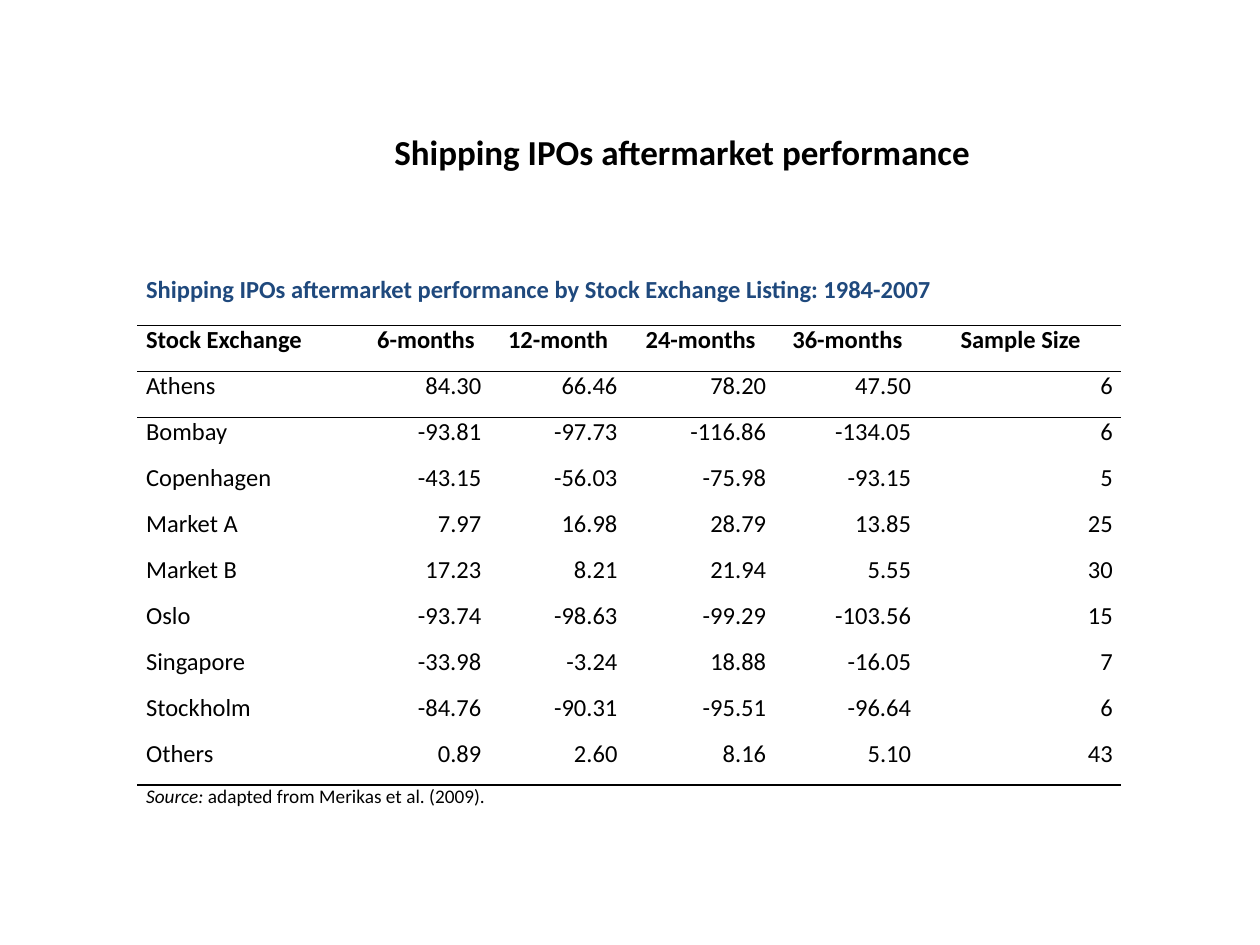
from lxml import etree
from pptx import Presentation
from pptx.dml.color import RGBColor
from pptx.enum.text import MSO_ANCHOR, PP_ALIGN
from pptx.oxml.ns import qn
from pptx.util import Pt

LEFT, CENTER, RIGHT, JUSTIFY = PP_ALIGN.LEFT, PP_ALIGN.CENTER, PP_ALIGN.RIGHT, PP_ALIGN.JUSTIFY
MIDDLE = MSO_ANCHOR.MIDDLE
COLORS = {"text": "000000", "caption": "1F497D", "rule": "000000"}
FONT = "Calibri"
PLAIN_TABLE_STYLE = "{2D5ABB26-0587-4C30-8999-92F81FD0307C}"

TITLE = "Shipping IPOs aftermarket performance"
CAPTION = "Shipping IPOs aftermarket performance by Stock Exchange Listing: 1984-2007"
HEADERS = ["Stock Exchange", "6-months", "12-month", "24-months", "36-months", "Sample Size"]
EXCHANGES = [
    ("Athens", "84.30", "66.46", "78.20", "47.50", "6"),
    ("Bombay", "-93.81", "-97.73", "-116.86", "-134.05", "6"),
    ("Copenhagen", "-43.15", "-56.03", "-75.98", "-93.15", "5"),
    ("Market A", "7.97", "16.98", "28.79", "13.85", "25"),
    ("Market B", "17.23", "8.21", "21.94", "5.55", "30"),
    ("Oslo", "-93.74", "-98.63", "-99.29", "-103.56", "15"),
    ("Singapore", "-33.98", "-3.24", "18.88", "-16.05", "7"),
    ("Stockholm", "-84.76", "-90.31", "-95.51", "-96.64", "6"),
    ("Others", "0.89", "2.60", "8.16", "5.10", "43"),
]
SOURCE_LABEL, SOURCE_TEXT = "Source:", " adapted from Merikas et al. (2009)."

TABLE_LEFT, TABLE_TOP = 78.5, 157.5
COLUMN_WIDTHS = [128.2, 73.4, 77.8, 85, 82.8, 115.2]
CAPTION_HEIGHT, ROW_HEIGHT, SOURCE_HEIGHT = 28.5, 26.25, 24
CELL_MARGIN = 5
RULE_WIDTH = 1


def add_run(paragraph, text, size=14, color="text", bold=False, italic=False):
    run = paragraph.add_run()
    run.text = text
    font = run.font
    font.name, font.size, font.bold, font.italic = FONT, Pt(size), bold, italic
    font.color.rgb = RGBColor.from_string(COLORS[color])


def add_rule(cell, side):
    """Draw a border on one side of a cell: lnT for top, lnB for bottom."""
    line = etree.Element(qn(f"a:{side}"), w=str(Pt(RULE_WIDTH)))
    fill = etree.SubElement(line, qn("a:solidFill"))
    etree.SubElement(fill, qn("a:srgbClr"), val=COLORS["rule"])
    cell._tc.get_or_add_tcPr().insert(0, line)


def add_title(slide):
    box = slide.shapes.add_textbox(Pt(68.4), Pt(70.6), Pt(643), Pt(31.7))
    frame = box.text_frame
    frame.word_wrap = True
    frame.vertical_anchor = MIDDLE
    frame.paragraphs[0].alignment = CENTER
    add_run(frame.paragraphs[0], TITLE, size=20, bold=True)


def add_performance_table(slide):
    heights = [CAPTION_HEIGHT] + [ROW_HEIGHT] * (len(EXCHANGES) + 1) + [SOURCE_HEIGHT]
    table = slide.shapes.add_table(
        len(heights), len(HEADERS), Pt(TABLE_LEFT), Pt(TABLE_TOP),
        Pt(sum(COLUMN_WIDTHS)), Pt(sum(heights))).table
    table.first_row = table.horz_banding = False
    table._tbl.tblPr.find(qn("a:tableStyleId")).text = PLAIN_TABLE_STYLE
    for column, width in zip(table.columns, COLUMN_WIDTHS):
        column.width = Pt(width)

    last = len(heights) - 1
    ruled_below = {0, 1, last - 1}
    for r, height in enumerate(heights):
        table.rows[r].height = Pt(height)
        for c in range(len(HEADERS)):
            cell = table.cell(r, c)
            cell.fill.background()
            cell.margin_left = cell.margin_right = Pt(CELL_MARGIN)
            cell.margin_top = cell.margin_bottom = 0
            if r in ruled_below:
                add_rule(cell, "lnB")
            if r - 1 in ruled_below:
                add_rule(cell, "lnT")

    for r in (0, last):
        table.cell(r, 0).merge(table.cell(r, len(HEADERS) - 1))
    add_run(table.cell(0, 0).text_frame.paragraphs[0], CAPTION, color="caption", bold=True)
    source = table.cell(last, 0).text_frame.paragraphs[0]
    add_run(source, SOURCE_LABEL, size=11, italic=True)
    add_run(source, SOURCE_TEXT, size=11)

    for r, values in enumerate([HEADERS] + EXCHANGES, start=1):
        is_header = r == 1
        name_align, value_align = (LEFT, CENTER) if is_header else (JUSTIFY, RIGHT)
        for c, value in enumerate(values):
            paragraph = table.cell(r, c).text_frame.paragraphs[0]
            paragraph.alignment = value_align if c else name_align
            add_run(paragraph, value, bold=is_header)


def main():
    deck = Presentation()
    deck.slide_width, deck.slide_height = Pt(720), Pt(540)
    slide = deck.slides.add_slide(deck.slide_layouts[6])
    add_title(slide)
    add_performance_table(slide)
    deck.save("out.pptx")


if __name__ == "__main__":
    main()
